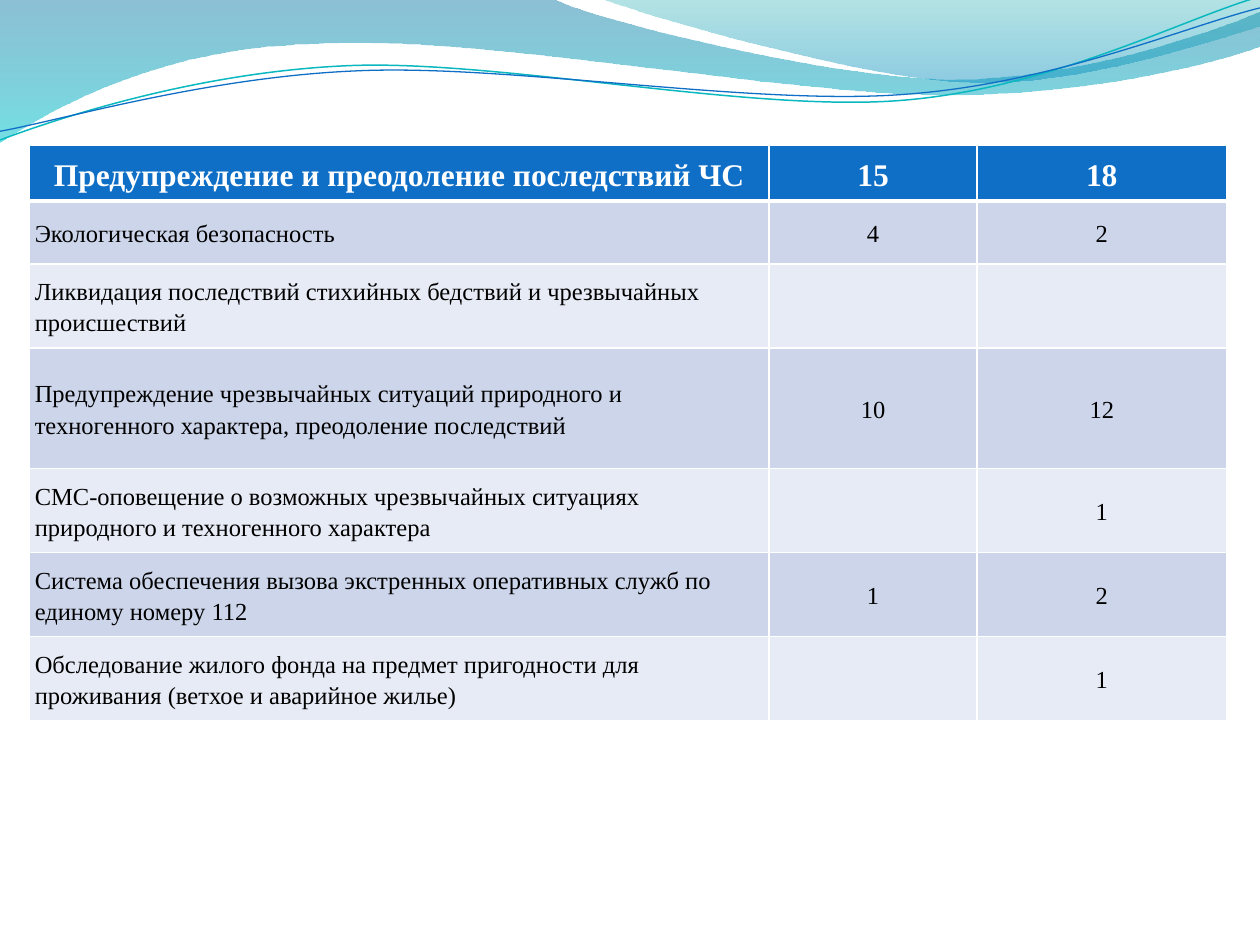
import math

import pptx
import pptx.dml.color
import pptx.enum.text
import pptx.oxml
import pptx.oxml.ns
import pptx.util

RGB = pptx.dml.color.RGBColor
Pt = pptx.util.Pt
ALIGN = pptx.enum.text.PP_ALIGN
qn = pptx.oxml.ns.qn

WHITE = RGB(0xFF, 0xFF, 0xFF)
BLACK = RGB(0x00, 0x00, 0x00)
BLUE = RGB(0x0F, 0x6F, 0xC6)
TURQUOISE = RGB(0x0A, 0xB8, 0xBF)
BAND_DARK = RGB(0xCC, 0xD5, 0xEA)
BAND_LIGHT = RGB(0xE7, 0xEB, 0xF5)
WAVE_DEEP = RGB(0x00, 0x74, 0xA1)
WAVE_AQUA = RGB(0x00, 0xC6, 0xCF)
CREST_GREEN = RGB(0x00, 0xA1, 0xA9)
CREST_BLUE = RGB(0x00, 0x8B, 0xBF)

WAVE = [(-0.5, -0.5), (317, -0.5), (343, 12, 478, 45, 546, 45), (614, 45, 690, 19, 720, 6.5),
        (720.5, 26), (708, 32, 626, 55, 537, 54), (448, 54, 275, 20, 185, 24.5),
        (93, 26, 33, 60, -0.5, 81.5)]
CREST = [(345, -0.5), (367, 8, 491, 44.5, 554, 47), (616, 49.5, 692, 23, 720, 15), (720, -0.5)]
UPPER_LINE = [(0, 80), (34.5, 67, 114, 41, 199.5, 37.5), (284.5, 34, 427, 64, 513.5, 57.5),
              (600, 51, 675.5, 11, 718.5, -1.5)]
LOWER_LINE = [(0, 75), (34, 69, 118, 44, 204, 40.5), (290, 36.5, 430, 60.5, 516, 54),
              (602, 48, 677.5, 15, 720, 4.5)]

COLUMN_WIDTHS = [422.6, 118.8, 142.6]
ROW_HEIGHTS = [32, 36, 48, 69, 48, 48, 48]
ROWS = [
    ("Предупреждение и преодоление последствий ЧС", "15", "18"),
    ("Экологическая безопасность", "4", "2"),
    ("Ликвидация последствий стихийных бедствий и чрезвычайных происшествий", "", ""),
    ("Предупреждение чрезвычайных ситуаций природного и техногенного характера, "
     "преодоление последствий", "10", "12"),
    ("СМС-оповещение о возможных чрезвычайных ситуациях природного и техногенного характера",
     "", "1"),
    ("Система обеспечения вызова экстренных оперативных служб по единому номеру 112", "1", "2"),
    ("Обследование жилого фонда на предмет пригодности для проживания "
     "(ветхое и аварийное жилье)", "", "1"),
]


def turn(point, degrees, center=(359, 41)):
    angle = math.radians(degrees)
    across, down = point[0] - center[0], point[1] - center[1]
    return (center[0] + across * math.cos(angle) - down * math.sin(angle),
            center[1] + across * math.sin(angle) + down * math.cos(angle))


class Painter:
    font = "Times New Roman"
    inset = Pt(3)
    tilt = -2.7

    def __init__(self, page):
        self.page = page

    def outline(self, segments, close, tilt=0):
        points = [turn(pair, -tilt) for segment in segments
                  for pair in zip(segment[::2], segment[1::2])]
        points = [(Pt(x), Pt(y)) for x, y in points]
        builder = self.page.shapes.build_freeform(*points[0])
        builder.add_line_segments(points[1:], close=close)
        shape = builder.convert_to_shape()
        shape.shadow.inherit = False
        shape.rotation = tilt
        self.bend(shape, segments[1:])
        return shape

    def bend(self, shape, segments):
        lines = iter(list(shape._element.iter(qn("a:lnTo"))))
        for segment in segments:
            line = next(lines)
            if len(segment) == 6:
                curve = line.makeelement(qn("a:cubicBezTo"), {})
                line.addprevious(curve)
                for part in (line, next(lines), next(lines)):
                    curve.append(part[0])
                    part.getparent().remove(part)

    def wave(self, segments, stops):
        shape = self.outline(segments, True)
        shape.line.fill.background()
        shape.fill.gradient()
        shape.fill.gradient_angle = 270
        for stop, (position, color, opacity) in zip(shape.fill.gradient_stops, stops):
            stop.position = position
            stop.color.rgb = color
        tags = shape._element.spPr.iter(qn("a:srgbClr"))
        for tag, (position, color, opacity) in zip(tags, stops):
            tag.append(tag.makeelement(qn("a:alpha"), {"val": str(opacity * 1000)}))

    def curve(self, segments, color, width):
        shape = self.outline(segments, False, self.tilt)
        shape.fill.background()
        shape.line.color.rgb = color
        shape.line.width = Pt(width)

    def borders(self, cell, top, bottom):
        properties = cell._tc.get_or_add_tcPr()
        for side, width in (("L", 1), ("R", 1), ("T", top), ("B", bottom)):
            properties.append(pptx.oxml.parse_xml(
                f'<a:ln{side} {pptx.oxml.ns.nsdecls("a")} w="{Pt(width)}"><a:solidFill>'
                f'<a:srgbClr val="{WHITE}"/></a:solidFill></a:ln{side}>'))

    def cell(self, cell, text, row, column):
        header = row == 0
        self.borders(cell, 3 if row == 1 else 1, 3 if header else 1)
        cell.fill.solid()
        cell.fill.fore_color.rgb = BLUE if header else BAND_DARK if row % 2 else BAND_LIGHT
        cell.margin_left = cell.margin_right = self.inset
        cell.margin_top = cell.margin_bottom = self.inset
        cell.vertical_anchor = pptx.enum.text.MSO_ANCHOR.MIDDLE
        if not text:
            return
        para = cell.text_frame.paragraphs[0]
        para.alignment = ALIGN.CENTER if header or column else ALIGN.LEFT
        para.line_spacing = 1.15
        span = para.add_run()
        span.text = text
        span.font.name = self.font
        span.font.size = Pt(18 if header else 14)
        span.font.bold = header
        span.font.color.rgb = WHITE if header else BLACK

    def table(self, left, top, widths, heights, rows):
        table = self.page.shapes.add_table(
            len(rows), len(widths), Pt(left), Pt(top), Pt(sum(widths)), Pt(sum(heights))).table
        for column, width in zip(table.columns, widths):
            column.width = Pt(width)
        for row, height in zip(table.rows, heights):
            row.height = Pt(height)
        for row, texts in enumerate(rows):
            for column, text in enumerate(texts):
                self.cell(table.cell(row, column), text, row, column)


def main():
    deck = pptx.Presentation()
    deck.slide_width, deck.slide_height = Pt(720), Pt(540)
    page = deck.slides.add_slide(deck.slide_layouts[6])
    painter = Painter(page)
    painter.wave(WAVE, [(0, WAVE_DEEP, 45), (1, WAVE_AQUA, 55)])
    painter.wave(CREST, [(0, CREST_GREEN, 30), (1, CREST_BLUE, 45)])
    painter.curve(UPPER_LINE, TURQUOISE, 0.85)
    painter.curve(LOWER_LINE, BLUE, 0.75)
    painter.table(16.9, 82.8, COLUMN_WIDTHS, ROW_HEIGHTS, ROWS)
    deck.save("out.pptx")


if __name__ == "__main__":
    main()
